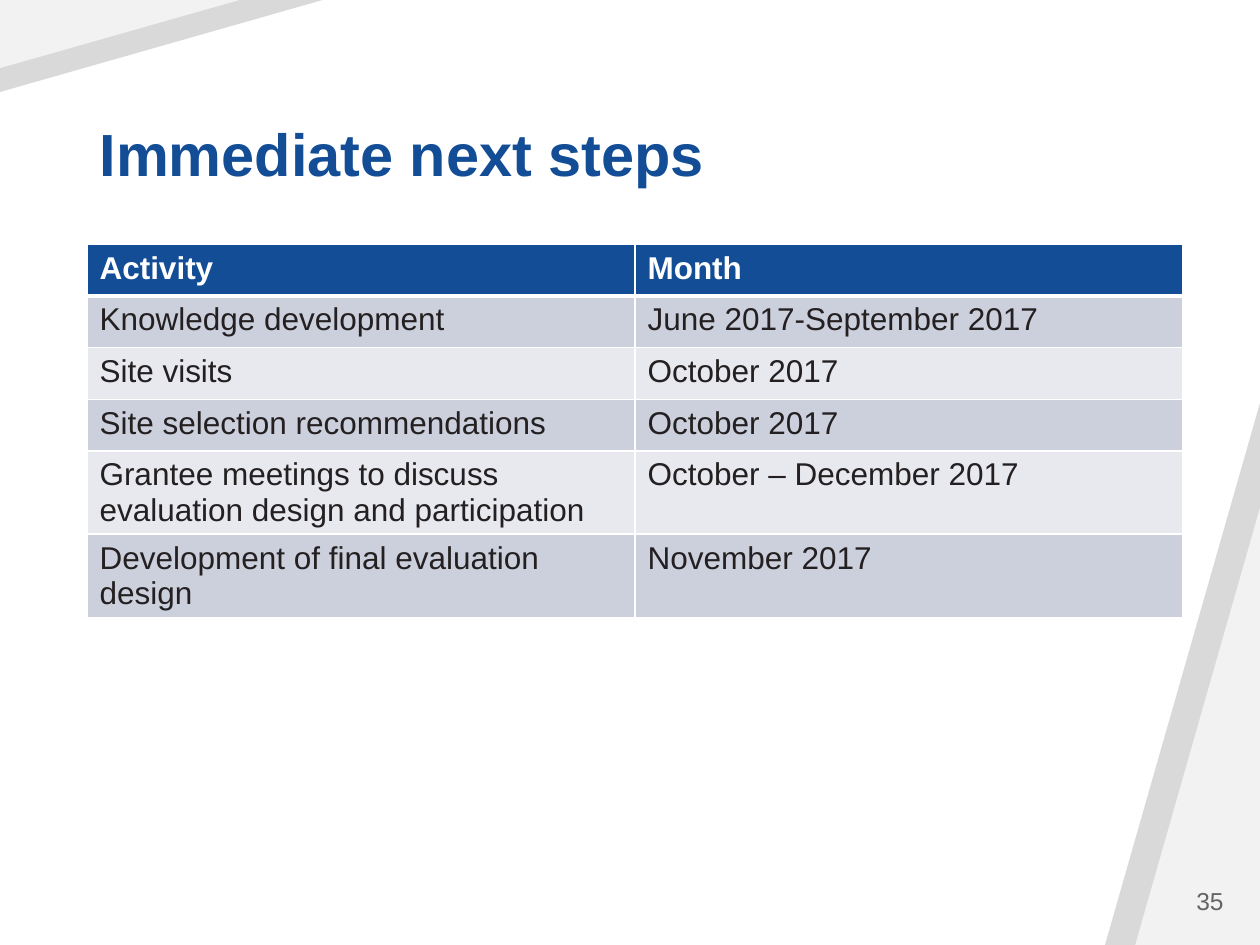
from lxml import etree
from pptx import Presentation
from pptx.dml.color import RGBColor
from pptx.enum.shapes import MSO_SHAPE
from pptx.enum.text import MSO_ANCHOR, MSO_AUTO_SIZE, PP_ALIGN
from pptx.oxml.ns import qn
from pptx.util import Inches, Pt

TRIANGLE = MSO_SHAPE.ISOSCELES_TRIANGLE
BOTTOM, MIDDLE = MSO_ANCHOR.BOTTOM, MSO_ANCHOR.MIDDLE
LEFT, RIGHT = PP_ALIGN.LEFT, PP_ALIGN.RIGHT
NO_FIT = MSO_AUTO_SIZE.NONE

BLUE = RGBColor(0x12, 0x4D, 0x95)
WHITE = RGBColor(0xFF, 0xFF, 0xFF)
INK = RGBColor(0x24, 0x20, 0x21)
NUMBER_GRAY = RGBColor(0x64, 0x64, 0x64)
EDGE_GRAY = RGBColor(0xD9, 0xD9, 0xD9)
CORNER_GRAY = RGBColor(0xF2, 0xF2, 0xF2)
DARK_BAND = RGBColor(0xCC, 0xD0, 0xDD)
LIGHT_BAND = RGBColor(0xE7, 0xE9, 0xEF)

PAGE_WIDTH, PAGE_HEIGHT = 10, 7.5
ROW_HEIGHT = 0.41
STEPS = [
    ("Activity", "Month"),
    ("Knowledge development", "June 2017-September 2017"),
    ("Site visits", "October 2017"),
    ("Site selection recommendations", "October 2017"),
    ("Grantee meetings to discuss evaluation design and participation",
     "October – December 2017"),
    ("Development of final evaluation design", "November 2017"),
]


def write_text(frame, text, size=18, color=INK, bold=False, align=LEFT, spacing=None):
    frame.word_wrap = True
    para = frame.paragraphs[0]
    para.alignment = align
    para.line_spacing = spacing
    span = para.add_run()
    span.text = text
    span.font.name = "Arial"
    span.font.size = Pt(size)
    span.font.bold = bold
    span.font.color.rgb = color


def add_corner(page, left, top, width, height, color, rotation=0):
    corner = page.shapes.add_shape(
        TRIANGLE, Inches(left), Inches(top), Inches(width), Inches(height))
    corner.adjustments[0] = 1
    corner.rotation = rotation
    corner.shadow.inherit = False
    corner.fill.solid()
    corner.fill.fore_color.rgb = color
    corner.line.fill.background()


def add_corners(page):
    for width, height, color in ((1.23, 4.3, EDGE_GRAY), (0.99, 3.47, CORNER_GRAY)):
        add_corner(page, PAGE_WIDTH - width, PAGE_HEIGHT - height, width, height, color)
    for width, height, color in ((2.56, 0.73, EDGE_GRAY), (1.9, 0.54, CORNER_GRAY)):
        add_corner(page, 0, 0, width, height, color, rotation=180)


def place_title(page, left, top, width, height):
    title = page.shapes.title
    title.left, title.top = Inches(left), Inches(top)
    title.width, title.height = Inches(width), Inches(height)
    frame = title.text_frame
    frame.auto_size = NO_FIT
    frame.vertical_anchor = BOTTOM
    write_text(frame, "Immediate next steps", size=34, color=BLUE, bold=True, spacing=0.9)


def add_borders(cell, **widths):
    properties = cell._tc.get_or_add_tcPr()
    for side in ("lnL", "lnR", "lnT", "lnB"):
        line = etree.SubElement(properties, qn("a:" + side), w=str(Pt(widths.get(side, 1))))
        fill = etree.SubElement(line, qn("a:solidFill"))
        etree.SubElement(fill, qn("a:srgbClr"), val=str(WHITE))


def add_steps_table(page, left, top, width):
    columns = len(STEPS[0])
    table = page.shapes.add_table(
        len(STEPS), columns, Inches(left), Inches(top), Inches(width),
        Inches(ROW_HEIGHT * len(STEPS))).table
    for column in table.columns:
        column.width = Inches(width / columns)
    for row_index, texts in enumerate(STEPS):
        header = row_index == 0
        band = BLUE if header else DARK_BAND if row_index % 2 else LIGHT_BAND
        table.rows[row_index].height = Inches(ROW_HEIGHT)
        for column_index, text in enumerate(texts):
            cell = table.cell(row_index, column_index)
            add_borders(cell, lnT=3 if row_index == 1 else 1, lnB=3 if header else 1)
            cell.fill.solid()
            cell.fill.fore_color.rgb = band
            write_text(cell.text_frame, text, color=WHITE if header else INK, bold=header)


def add_page_number(page, left, top, width, height):
    box = page.shapes.add_textbox(Inches(left), Inches(top), Inches(width), Inches(height))
    box.text_frame.vertical_anchor = MIDDLE
    write_text(box.text_frame, "35", size=14, color=NUMBER_GRAY, align=RIGHT)


def main():
    deck = Presentation()
    deck.slide_width, deck.slide_height = Inches(PAGE_WIDTH), Inches(PAGE_HEIGHT)
    page = deck.slides.add_slide(deck.slide_layouts[5])
    add_corners(page)
    place_title(page, 0.69, 0.4, 8.7, 1.15)
    add_steps_table(page, 0.69, 1.94, 8.7)
    add_page_number(page, 8.41, 6.95, 1.4, 0.4)
    deck.save("out.pptx")


if __name__ == "__main__":
    main()
